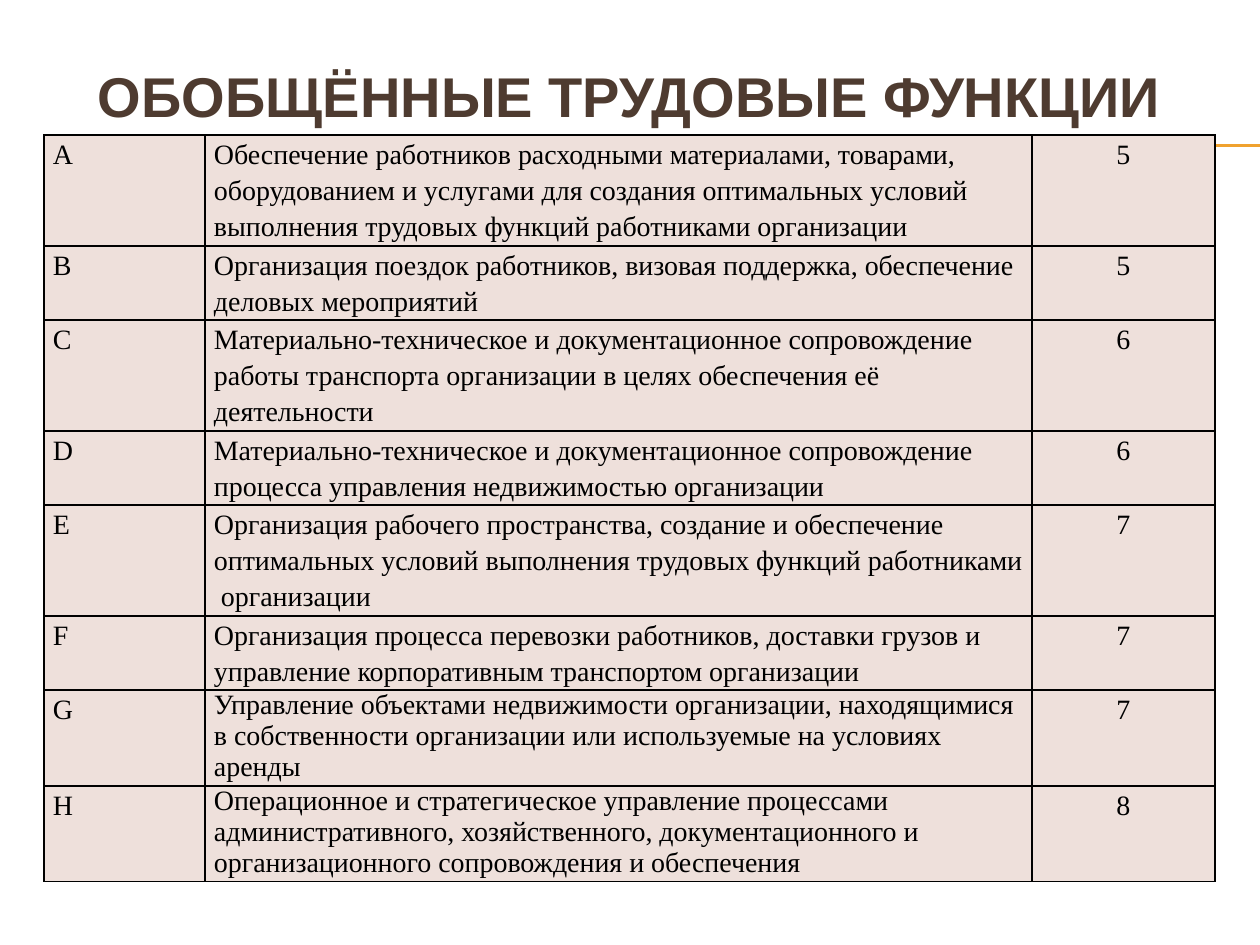
"""Build a slide with a table of generalised job functions."""
import pptx
import pptx.dml.color
import pptx.enum.shapes
import pptx.enum.text
import pptx.oxml
import pptx.util
from lxml import etree

PX = 914400 / 126
ROW_HEIGHTS = {"three_lines": 111, "two_lines": 74, "compact": 96}
FUNCTIONS = [
    ("А", "Обеспечение работников расходными материалами, товарами, оборудованием и услугами для создания оптимальных условий выполнения трудовых функций работниками организации", "5", "three_lines"),
    ("B", "Организация поездок работников, визовая поддержка, обеспечение деловых мероприятий", "5", "two_lines"),
    ("C", "Материально-техническое и документационное сопровождение работы транспорта организации в целях обеспечения её деятельности", "6", "three_lines"),
    ("D", "Материально-техническое и документационное сопровождение процесса управления недвижимостью организации", "6", "two_lines"),
    ("E", "Организация рабочего пространства, создание и обеспечение оптимальных условий выполнения трудовых функций работниками  организации", "7", "three_lines"),
    ("F", "Организация процесса перевозки работников, доставки грузов и управление корпоративным транспортом организации", "7", "two_lines"),
    ("G", "Управление объектами недвижимости организации, находящимися в собственности организации или используемые на условиях аренды", "7", "compact"),
    ("H", "Операционное и стратегическое управление процессами административного, хозяйственного, документационного и организационного сопровождения и обеспечения", "8", "compact"),
]


def px(length):
    """Turn pixels into EMU."""
    return pptx.util.Emu(round(length * PX))


def color(value):
    """Turn a hex string into a colour."""
    return pptx.dml.color.RGBColor.from_string(value)


def set_font(paragraph, name, size, value, bold=False):
    """Set the font of a whole paragraph."""
    font = paragraph.font
    font.name, font.size, font.bold = name, pptx.util.Pt(size), bold
    font.color.rgb = color(value)


def add_rule(slide, left, top, width):
    """Draw the double accent rule."""
    for offset in (0, 1):
        line = slide.shapes.add_connector(
            pptx.enum.shapes.MSO_CONNECTOR.STRAIGHT,
            px(left), px(top + offset), px(left + width), px(top + offset))
        line.line.color.rgb = color("F0A22E")
        line.line.width = pptx.util.Pt(0.75)
        etree.SubElement(line._element.spPr, pptx.oxml.ns.qn("a:effectLst"))


def place_title(slide, left, top, width, height):
    """Place and format the title."""
    title = slide.shapes.title
    title.left, title.top, title.width, title.height = map(px, (left, top, width, height))
    title.text_frame.text = "ОБОБЩЁННЫЕ ТРУДОВЫЕ ФУНКЦИИ"
    title.text_frame.vertical_anchor = pptx.enum.text.MSO_ANCHOR.MIDDLE
    paragraph = title.text_frame.paragraphs[0]
    paragraph.alignment = pptx.enum.text.PP_ALIGN.CENTER
    set_font(paragraph, "Arial", 32, "4E3B30", True)


def add_borders(cell):
    """Give a cell thin black borders."""
    properties = cell._tc.get_or_add_tcPr()
    for position, side in enumerate(("lnL", "lnR", "lnT", "lnB")):
        border = pptx.oxml.parse_xml(
            f'<a:{side} {pptx.oxml.ns.nsdecls("a")} w="12700"><a:solidFill>'
            f'<a:srgbClr val="000000"/></a:solidFill></a:{side}>')
        properties.insert(position, border)


def format_cell(cell, text, alignment, spacing):
    """Fill one cell with formatted text."""
    cell.text = text
    cell.margin_left = cell.margin_right = px(9)
    cell.margin_top = cell.margin_bottom = 0
    cell.fill.solid()
    cell.fill.fore_color.rgb = color("EEE0DB")
    add_borders(cell)
    paragraph = cell.text_frame.paragraphs[0]
    paragraph.alignment = alignment
    paragraph.line_spacing = spacing
    set_font(paragraph, "Times New Roman", 16, "000000")


def add_functions_table(slide, left, top, column_widths):
    """Add the table of functions with codes and levels."""
    heights = [ROW_HEIGHTS[kind] for *_, kind in FUNCTIONS]
    table = slide.shapes.add_table(
        len(FUNCTIONS), len(column_widths), px(left), px(top),
        px(sum(column_widths)), px(sum(heights))).table
    table.first_row = table.horz_banding = False
    for column, width in zip(table.columns, column_widths):
        column.width = px(width)
    align = pptx.enum.text.PP_ALIGN
    for row, height, (code, name, level, kind) in zip(table.rows, heights, FUNCTIONS):
        row.height = px(height)
        code_cell, name_cell, level_cell = row.cells
        format_cell(code_cell, code, align.LEFT, 1.15)
        format_cell(name_cell, name, align.LEFT, 1.0 if kind == "compact" else 1.15)
        format_cell(level_cell, level, align.CENTER, 1.15)


def main():
    """Build and save the presentation."""
    presentation = pptx.Presentation()
    presentation.slide_width, presentation.slide_height = px(1260), px(945)
    slide = presentation.slides.add_slide(presentation.slide_layouts[5])
    slide.background.fill.solid()
    slide.background.fill.fore_color.rgb = color("FFFFFF")
    add_rule(slide, 71, 145, 1189)
    add_functions_table(slide, 44, 135, (161, 827, 183))
    place_title(slide, 44, 66, 1171, 59)
    presentation.save("out.pptx")


if __name__ == "__main__":
    main()
